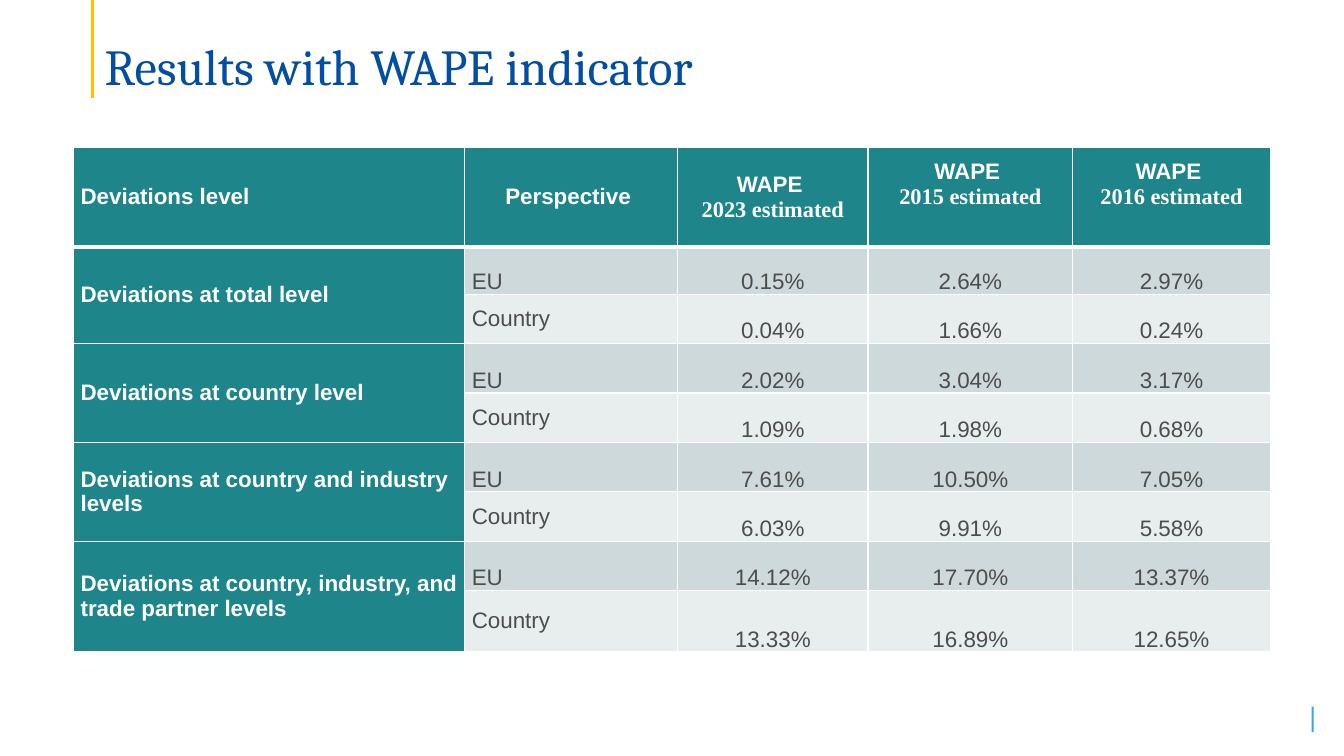
from dataclasses import dataclass

from lxml import etree
from pptx import Presentation
from pptx import util as u
from pptx.dml.color import RGBColor
from pptx.enum import shapes, text
from pptx.oxml import ns


@dataclass(frozen=True)
class Theme:
    """Colours, fonts and type sizes of the slide."""
    title: str = "034EA2"
    gold: str = "FFC000"
    sky: str = "32AADC"
    teal: str = "1E858B"
    white: str = "FFFFFF"
    ink: str = "4D4D4D"
    bands: tuple = ("CDD9DA", "E8EDEE")
    title_font: str = "Cambria"
    body_font: str = "Arial"
    year_font: str = "Times New Roman"
    title_size: int = 36
    body_size: int = 16


THEME = Theme()
MIDDLE, BOTTOM = text.MSO_ANCHOR.MIDDLE, text.MSO_ANCHOR.BOTTOM
LEFT, CENTER = text.PP_ALIGN.LEFT, text.PP_ALIGN.CENTER

COLUMNS = [3.88, 2.11, 1.89, 2.03, 1.96]
ROWS = [0.99, 0.47] + [0.49] * 6 + [0.61]
HEADINGS = [
    (["Deviations level"], LEFT, 0),
    (["Perspective "], CENTER, 0),
    (["WAPE ", "2023 estimated"], CENTER, 0),
    (["WAPE ", "2015 estimated"], CENTER, 0.25),
    (["WAPE ", "2016 estimated"], CENTER, 0.25),
]
PERSPECTIVES = [("EU", BOTTOM), ("Country", MIDDLE)]
LEVELS = [
    ("Deviations at total level",
     [["0.15%", "2.64%", "2.97%"], ["0.04%", "1.66%", "0.24%"]]),
    ("Deviations at country level",
     [["2.02%", "3.04%", "3.17%"], ["1.09%", "1.98%", "0.68%"]]),
    ("Deviations at country and industry levels",
     [["7.61%", "10.50%", "7.05%"], ["6.03%", "9.91%", "5.58%"]]),
    ("Deviations at country, industry, and trade partner levels",
     [["14.12%", "17.70%", "13.37%"], ["13.33%", "16.89%", "12.65%"]]),
]


def set_font(font, name, size, colour, bold=False):
    """Apply a face, size, colour and weight to a font."""
    font.name, font.size, font.bold = name, u.Pt(size), bold
    font.color.rgb = RGBColor.from_string(colour)


def set_borders(cell, top=1, bottom=1):
    """Draw white borders around a cell, with widths in points."""
    properties = cell._tc.get_or_add_tcPr()
    for side, width in (("L", 1), ("R", 1), ("T", top), ("B", bottom)):
        line = etree.SubElement(properties, ns.qn(f"a:ln{side}"), w=str(u.Pt(width)))
        fill = etree.SubElement(line, ns.qn("a:solidFill"))
        etree.SubElement(fill, ns.qn("a:srgbClr"), val=THEME.white)


def paint_cell(cell, fill, top=1, bottom=1):
    """Give a cell its borders and fill."""
    set_borders(cell, top, bottom)
    cell.fill.solid()
    cell.fill.fore_color.rgb = RGBColor.from_string(fill)


def write_cell(cell, lines, colour, align, anchor, bold=False, foot=0):
    """Write lines into a cell, the second in the year font."""
    cell.margin_left = cell.margin_right = u.Inches(0.07)
    cell.margin_top, cell.margin_bottom = 0, u.Inches(foot)
    cell.vertical_anchor = anchor
    cell.text = "\n".join(lines)
    for para, face in zip(cell.text_frame.paragraphs, (THEME.body_font, THEME.year_font)):
        para.alignment = align
        set_font(para.font, face, THEME.body_size, colour, bold)


def add_results(page, left, top):
    """Place the table of results with its corner at left and top."""
    table = page.shapes.add_table(
        len(ROWS), len(COLUMNS), u.Inches(left), u.Inches(top),
        u.Inches(sum(COLUMNS)), u.Inches(sum(ROWS))).table
    for column, width in zip(table.columns, COLUMNS):
        column.width = u.Inches(width)
    for row, height in zip(table.rows, ROWS):
        row.height = u.Inches(height)
    for column, (lines, align, foot) in enumerate(HEADINGS):
        cell = table.cell(0, column)
        paint_cell(cell, THEME.teal, bottom=3)
        write_cell(cell, lines, THEME.white, align, MIDDLE, True, foot)
    for level, (label, groups) in enumerate(LEVELS):
        first = 1 + 2 * level
        for offset, values in enumerate(groups):
            row = first + offset
            fills = [THEME.teal] + [THEME.bands[offset]] * (len(COLUMNS) - 1)
            for column, fill in enumerate(fills):
                paint_cell(table.cell(row, column), fill, top=3 if row == 1 else 1)
            name, anchor = PERSPECTIVES[offset]
            write_cell(table.cell(row, 1), [name], THEME.ink, LEFT, anchor)
            for column, value in enumerate(values, 2):
                write_cell(table.cell(row, column), [value], THEME.ink, CENTER, BOTTOM)
        heading = table.cell(first, 0)
        heading.merge(table.cell(first + 1, 0))
        write_cell(heading, [label], THEME.white, LEFT, MIDDLE, True)


def add_title(page, left, top, width, height):
    """Place the title and the gold rule beside it."""
    rule_x, rule_end = u.Inches(left - 0.02), u.Inches(top + height + 0.01)
    rule = page.shapes.add_connector(
        shapes.MSO_CONNECTOR.STRAIGHT, rule_x, 0, rule_x, rule_end)
    rule.line.color.rgb = RGBColor.from_string(THEME.gold)
    rule.line.width = u.Pt(2.25)
    etree.SubElement(rule._element.spPr, ns.qn("a:effectLst"))
    box = page.shapes.add_textbox(*map(u.Inches, (left, top, width, height)))
    frame = box.text_frame
    frame.word_wrap = True
    frame.vertical_anchor = BOTTOM
    frame.margin_bottom = 0
    para = frame.paragraphs[0]
    para.text = "Results with WAPE indicator"
    para.line_spacing = 0.9
    set_font(para.font, THEME.title_font, THEME.title_size, THEME.title)


def add_page_mark(page, left, top, width, height):
    """Place the thin blue mark at the lower right."""
    mark = page.shapes.add_shape(
        shapes.MSO_SHAPE.RECTANGLE, *map(u.Inches, (left, top, width, height)))
    mark.shadow.inherit = False
    mark.fill.solid()
    mark.fill.fore_color.rgb = RGBColor.from_string(THEME.sky)
    mark.line.fill.background()


def main():
    """Build the slide and save it."""
    deck = Presentation()
    deck.slide_width, deck.slide_height = u.Inches(13.33), u.Inches(7.5)
    page = deck.slides.add_slide(deck.slide_layouts[6])
    add_page_mark(page, 13.01, 7.01, 0.02, 0.25)
    add_results(page, 0.73, 1.46)
    add_title(page, 0.94, 0.12, 11.67, 0.84)
    deck.save("out.pptx")


if __name__ == "__main__":
    main()
